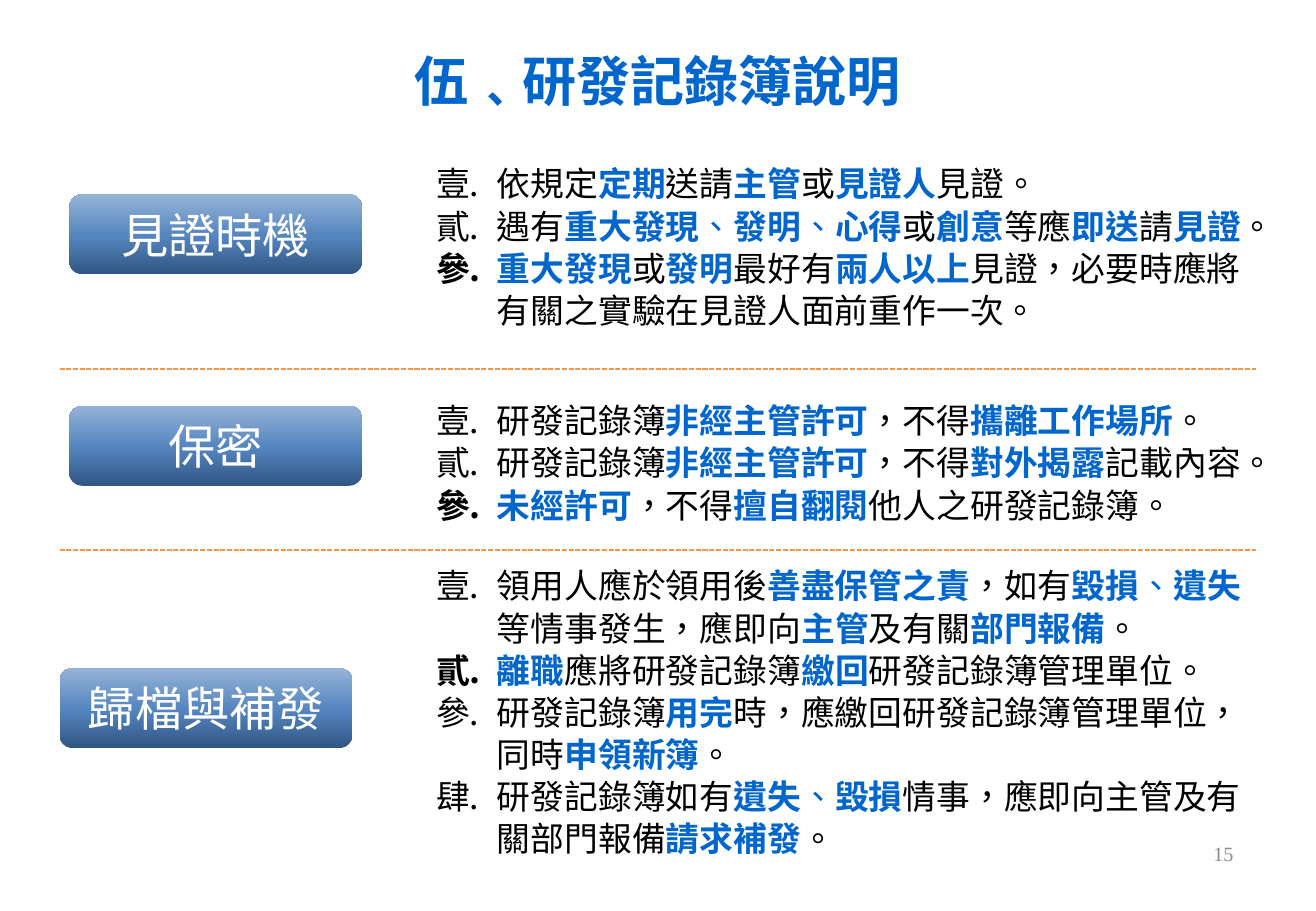
from pptx import Presentation
from pptx.dml.color import RGBColor
from pptx.enum.dml import MSO_LINE
from pptx.enum.shapes import MSO_CONNECTOR, MSO_SHAPE
from pptx.enum.text import MSO_ANCHOR, MSO_AUTO_SIZE, PP_ALIGN
from pptx.oxml import parse_xml
from pptx.oxml.ns import nsdecls
from pptx.util import Inches, Pt
from lxml import etree

CENTER, RIGHT = PP_ALIGN.CENTER, PP_ALIGN.RIGHT
MIDDLE, TOP = MSO_ANCHOR.MIDDLE, MSO_ANCHOR.TOP
ROUNDED = MSO_SHAPE.ROUNDED_RECTANGLE
STRAIGHT = MSO_CONNECTOR.STRAIGHT
DASH = MSO_LINE.SQUARE_DOT

TITLE = ["伍", "﹑", "研發記錄簿說明"]
PAGE_NUMBER = "15"
SECTIONS = [
    {"label": "見證時機", "label_at": (0.57, 1.6), "text_top": 1.28, "text_height": 1.51, "items": [
        "依規定*定期*送請*主管*或*見證人*見證。",
        "遇有*重大發現*、*發明*、*心得*或*創意*等應*即送*請*見證*。",
        "*重大發現*或*發明*最好有*兩人以上*見證，必要時應將有關之實驗在見證人面前重作一次。",
    ]},
    {"label": "保密", "label_at": (0.57, 3.34), "text_top": 3.23, "text_height": 1.16, "items": [
        "研發記錄簿*非經主管許可*，不得*攜離工作場所*。",
        "研發記錄簿*非經主管許可*，不得*對外揭露*記載內容。",
        "*未經許可*，不得*擅自翻閱*他人之研發記錄簿。",
    ]},
    {"label": "歸檔與補發", "label_at": (0.49, 5.5), "text_top": 4.59, "text_height": 2.57, "items": [
        "領用人應於領用後*善盡保管之責*，如有*毀損*、*遺失*等情事發生，應即向*主管*及有關*部門報備*。",
        "*離職*應將研發記錄簿*繳回*研發記錄簿管理單位。",
        "研發記錄簿*用完*時，應繳回研發記錄簿管理單位，同時*申領新簿*。",
        "研發記錄簿如有*遺失*、*毀損*情事，應即向主管及有關部門報備*請求補發*。",
    ]},
]
DIVIDER_TOPS = [3.04, 4.53]

COLORS = {"text": "000000", "accent": "0066CC", "divider": "F79646",
          "number": "8C8C8C", "label": "FFFFFF"}
GRADIENT = {0: "315683", 48: "5485BF", 100: "95B3D7"}
CJK, SANS, SERIF = "Noto Sans CJK SC", "Arial", "Times New Roman"
WIDTH, HEIGHT = 10.83, 7.5
MARGIN = 0.49
LABEL_SIZE = (2.41, 0.66)
TEXT_LEFT, TEXT_WIDTH = 3.49, 6.85


def box(left, top, width, height):
    return [Inches(value) for value in (left, top, width, height)]


def add_text(paragraph, text, font=CJK, size=20, color="text", bold=False):
    run = paragraph.add_run()
    run.text = text
    run.font.name = font
    run.font.size = Pt(size)
    run.font.bold = bold
    run.font.color.rgb = RGBColor.from_string(COLORS[color])
    properties = run.font._element
    properties.set("lang", "zh-TW")
    east_asian = parse_xml(f'<a:ea {nsdecls("a")} typeface="{font}"/>')
    properties.find("{*}latin").addnext(east_asian)


def prepare_frame(shape, anchor=TOP, wrap=True):
    frame = shape.text_frame
    frame.auto_size = MSO_AUTO_SIZE.NONE
    frame.word_wrap = wrap
    frame.vertical_anchor = anchor
    return frame


def number_paragraph(paragraph):
    properties = paragraph._p.get_or_add_pPr()
    properties.set("marL", str(Inches(0.5)))
    properties.set("indent", str(Inches(-0.5)))
    color = parse_xml(f'<a:buClr {nsdecls("a")}><a:srgbClr val="{COLORS["text"]}"/></a:buClr>')
    number = parse_xml(f'<a:buAutoNum {nsdecls("a")} type="ea1ChtPeriod"/>')
    properties.extend([color, number])
    paragraph.line_spacing = Pt(25)


def add_items(slide, section):
    shape = slide.shapes.add_textbox(
        *box(TEXT_LEFT, section["text_top"], TEXT_WIDTH, section["text_height"]))
    frame = prepare_frame(shape)
    for index, item in enumerate(section["items"]):
        paragraph = frame.add_paragraph() if index else frame.paragraphs[0]
        number_paragraph(paragraph)
        for position, part in enumerate(item.split("*")):
            emphasised = position % 2 == 1
            color = "accent" if emphasised or part == "、" else "text"
            if part:
                add_text(paragraph, part, color=color, bold=emphasised)


def add_label(slide, section):
    shape = slide.shapes.add_shape(ROUNDED, *box(*section["label_at"], *LABEL_SIZE))
    shape.shadow.inherit = False
    shape.line.fill.background()
    stops = "".join(f'<a:gs pos="{share * 1000}"><a:srgbClr val="{color}"/></a:gs>'
                    for share, color in GRADIENT.items())
    gradient = parse_xml(f'<a:gradFill {nsdecls("a")} rotWithShape="1"><a:gsLst>{stops}</a:gsLst>'
                         '<a:lin ang="16200000" scaled="0"/></a:gradFill>')
    shape._element.spPr.find("{*}prstGeom").addnext(gradient)
    paragraph = prepare_frame(shape, MIDDLE).paragraphs[0]
    paragraph.alignment = CENTER
    add_text(paragraph, section["label"], font=SANS, size=28, color="label")


def add_divider(slide, top):
    line = slide.shapes.add_connector(
        STRAIGHT, Inches(MARGIN), Inches(top), Inches(WIDTH - MARGIN), Inches(top))
    line.line.color.rgb = RGBColor.from_string(COLORS["divider"])
    line.line.width = Pt(1)
    line.line.dash_style = DASH
    properties = line._element.spPr
    etree.SubElement(properties, f"{{{properties.nsmap['a']}}}effectLst")


def add_title(slide):
    title = slide.shapes.title
    title.left, title.top, title.width, title.height = box(MARGIN, 0.4, WIDTH - 2 * MARGIN, 0.52)
    frame = prepare_frame(title, MIDDLE, wrap=False)
    frame.margin_left = frame.margin_right = frame.margin_top = frame.margin_bottom = 0
    paragraph = frame.paragraphs[0]
    paragraph.alignment = CENTER
    for text in TITLE:
        font = CJK if text == "﹑" else SANS
        add_text(paragraph, text, font=font, size=32, color="accent", bold=True)


def add_page_number(slide):
    shape = slide.shapes.add_textbox(*box(7.81, 6.83, 2.44, 0.4))
    paragraph = prepare_frame(shape, MIDDLE).paragraphs[0]
    paragraph.alignment = RIGHT
    add_text(paragraph, PAGE_NUMBER, font=SERIF, size=12, color="number")


def main():
    presentation = Presentation()
    presentation.slide_width, presentation.slide_height = Inches(WIDTH), Inches(HEIGHT)
    slide = presentation.slides.add_slide(presentation.slide_layouts[5])
    add_title(slide)
    for section in SECTIONS:
        add_items(slide, section)
        add_label(slide, section)
    for top in DIVIDER_TOPS:
        add_divider(slide, top)
    add_page_number(slide)
    presentation.save("out.pptx")


if __name__ == "__main__":
    main()
